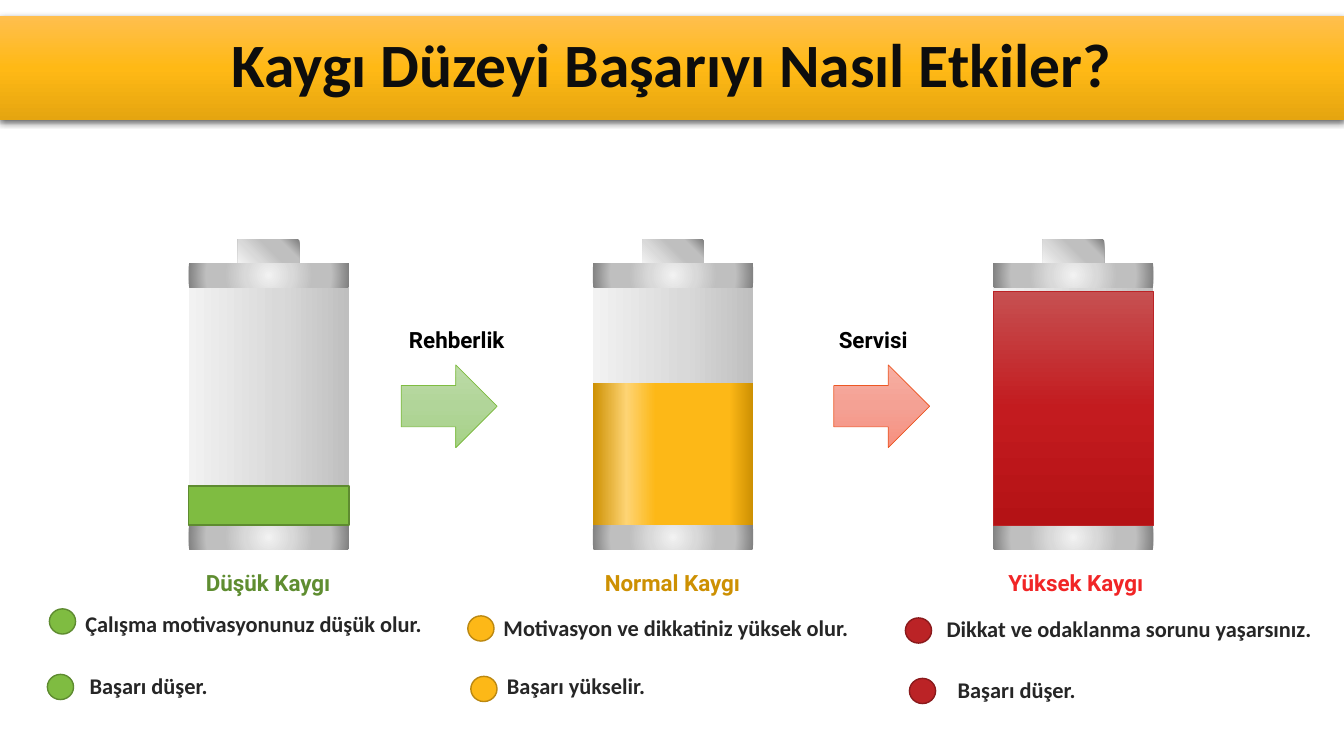
"""Build a slide comparing three anxiety levels as batteries."""
from pptx import Presentation
from pptx.dml.color import RGBColor
from pptx.enum.shapes import MSO_SHAPE
from pptx.enum.text import MSO_ANCHOR, MSO_AUTO_SIZE, PP_ALIGN
from pptx.oxml import parse_xml
from pptx.oxml.ns import nsdecls, qn
from pptx.util import Inches, Pt

COLOURS = {
    "black": "000000", "title": "0D0D0D", "text": "262626",
    "green": "7FBC41", "green line": "5E8B30", "green label": "5F8D31",
    "amber": "FDB817", "amber line": "BB8811", "amber label": "CD9002",
    "red": "BB2326", "red line": "8A1A1C", "red label": "F12526",
    "orange line": "EC5724",
}
LINEAR = '<a:lin ang="{}" scaled="0"/>'
CIRCLE = '<a:path path="circle"><a:fillToRect l="{}" t="{}" r="{}" b="{}"/></a:path>'
ACROSS = LINEAR.format(0)
DOWN = LINEAR.format(5400000)
CENTRE = CIRCLE.format(50000, 50000, 50000, 50000)
CORNER = CIRCLE.format(0, 100000, 100000, 0)
METAL = {0: "F2F2F2", 29: "D9D9D9", 55: "BFBFBF", 77: "BFBFBF", 100: "808080"}
GRADIENTS = {
    "casing": ({0: "F2F2F2", 57: "D9D9D9", 100: "BFBFBF"}, ACROSS),
    "cap": (METAL, CORNER),
    "rim": (METAL, CENTRE),
    "red charge": ({0: "C65051", 50: "C31B1F", 100: "B41215"}, DOWN),
    "amber charge": ({0: "CD9002", 21: "FED474", 39: "FDB817", 85: "FDB817",
                      100: "CD9002"}, ACROSS),
    "green arrow": ({0: "BCDBA7", 50: "B1D599", 100: "A6D286"}, DOWN),
    "red arrow": ({0: "F7AEA2", 50: "F4A194", 100: "F7907F"}, DOWN),
    "banner": ({0: "FFBF4E", 50: "FFB915", 100: "E5A510"}, DOWN),
}


def paint(shape, fill, line=None, width=1):
    """Give a shape its fill and outline, without a shadow."""
    shape.shadow.inherit = False
    if fill in GRADIENTS:
        stops, direction = GRADIENTS[fill]
        stop_xml = "".join(
            f'<a:gs pos="{position * 1000}"><a:srgbClr val="{colour}"/></a:gs>'
            for position, colour in stops.items())
        shape.fill.gradient()
        properties = shape.element.spPr
        properties.replace(properties.find(qn("a:gradFill")), parse_xml(
            f'<a:gradFill {nsdecls("a")} rotWithShape="1">'
            f"<a:gsLst>{stop_xml}</a:gsLst>{direction}</a:gradFill>"))
    else:
        shape.fill.solid()
        shape.fill.fore_color.rgb = RGBColor.from_string(COLOURS[fill])
    if line:
        shape.line.color.rgb = RGBColor.from_string(COLOURS[line])
        shape.line.width = Pt(width)
    else:
        shape.line.fill.background()


def write(frame, text, alignment, size, font, colour):
    """Put one bold paragraph into a text frame."""
    paragraph = frame.paragraphs[0]
    paragraph.alignment = alignment
    run = paragraph.add_run()
    run.text = text
    for name, value in {"size": Pt(size), "name": font, "bold": True}.items():
        setattr(run.font, name, value)
    run.font.color.rgb = RGBColor.from_string(COLOURS[colour])


presentation = Presentation()
presentation.slide_width = Inches(13.33)
presentation.slide_height = Inches(7.5)
slide = presentation.slides.add_slide(presentation.slide_layouts[5])

title = slide.shapes.title
placement = {"left": 0, "top": 0.16, "width": 13.33, "height": 1.03}
for name, value in placement.items():
    setattr(title, name, Inches(value))
paint(title, "banner")
title.element.spPr.find(qn("a:effectLst")).append(parse_xml(
    f'<a:outerShdw {nsdecls("a")} blurRad="57150" dist="19050" dir="5400000" '
    'algn="ctr" rotWithShape="0"><a:srgbClr val="000000">'
    '<a:alpha val="63000"/></a:srgbClr></a:outerShdw>'))
title.text_frame.vertical_anchor = MSO_ANCHOR.MIDDLE
title.text_frame.auto_size = MSO_AUTO_SIZE.NONE
write(title.text_frame, "Kaygı Düzeyi Başarıyı Nasıl Etkiler?", PP_ALIGN.CENTER,
      44, "Calibri", "title")
title.text_frame.paragraphs[0].line_spacing = 0.9

BATTERY_WIDTH = 1.59
CHARGE_BOTTOM = 5.21
batteries = [
    (1.87, 4.82, "green", "green line", 1),
    (5.88, 3.8, "amber charge", None, 0),
    (9.85, 2.89, "red charge", "red", 0.5),
]
for left, charge_top, fill, line, line_width in batteries:
    group = slide.shapes.add_group_shape()
    for part_left, top, width, height, part_fill in [
        (left, 2.61, BATTERY_WIDTH, 2.84, "casing"),
        (left + 0.49, 2.38, 0.61, 0.23, "cap"),
        (left, 2.61, BATTERY_WIDTH, 0.24, "rim"),
        (left, CHARGE_BOTTOM, BATTERY_WIDTH, 0.24, "rim"),
    ]:
        part = group.shapes.add_shape(
            MSO_SHAPE.RECTANGLE, Inches(part_left), Inches(top),
            Inches(width), Inches(height))
        paint(part, part_fill)
    charge = slide.shapes.add_shape(
        MSO_SHAPE.RECTANGLE, Inches(left), Inches(charge_top),
        Inches(BATTERY_WIDTH), Inches(CHARGE_BOTTOM - charge_top))
    paint(charge, fill, line, line_width)

for left, fill, line in [(3.98, "green arrow", "green"),
                         (8.27, "red arrow", "orange line")]:
    arrow = slide.shapes.add_shape(
        MSO_SHAPE.RIGHT_ARROW, Inches(left), Inches(3.62),
        Inches(0.95), Inches(0.82))
    paint(arrow, fill, line, 0.5)

bullets = [
    (0.49, 6.04, "green"), (0.47, 6.69, "green"),
    (4.64, 6.11, "amber"), (4.67, 6.71, "amber"),
    (8.98, 6.13, "red"), (9.02, 6.73, "red"),
]
for left, top, colour in bullets:
    bullet = slide.shapes.add_shape(
        MSO_SHAPE.OVAL, Inches(left), Inches(top), Inches(0.26), Inches(0.25))
    paint(bullet, colour, f"{colour} line")

labels = [
    (3.91, 3.19, 1.24, "Rehberlik", "black"),
    (8.2, 3.19, 0.92, "Servisi", "black"),
    (1.9, 5.6, 1.52, "Düşük Kaygı", "green label"),
    (5.85, 5.6, 1.64, "Normal Kaygı", "amber label"),
    (9.85, 5.6, 1.64, "Yüksek Kaygı", "red label"),
]
effects = [
    (0.72, 6, 3.59, "Çalışma motivasyonunuz düşük olur.", PP_ALIGN.CENTER),
    (0.79, 6.62, 3.59, "Başarı düşer.", PP_ALIGN.LEFT),
    (4.74, 6.04, 3.93, "Motivasyon ve dikkatiniz yüksek olur.", PP_ALIGN.CENTER),
    (4.93, 6.62, 3.59, "Başarı yükselir.", PP_ALIGN.LEFT),
    (9.29, 6.05, 3.87, "Dikkat ve odaklanma sorunu yaşarsınız.", PP_ALIGN.LEFT),
    (9.4, 6.66, 3.93, "Başarı düşer.", PP_ALIGN.LEFT),
]
texts = [(*label[:4], PP_ALIGN.CENTER, "Roboto", label[4], False) for label in labels]
texts += [(*effect, "Calibri", "text", True) for effect in effects]
for left, top, width, text, alignment, font, colour, wrap in texts:
    text_box = slide.shapes.add_textbox(
        Inches(left), Inches(top), Inches(width), Inches(0.37))
    text_box.text_frame.word_wrap = wrap
    text_box.text_frame.auto_size = MSO_AUTO_SIZE.SHAPE_TO_FIT_TEXT
    write(text_box.text_frame, text, alignment, 16, font, colour)

presentation.save("out.pptx")
